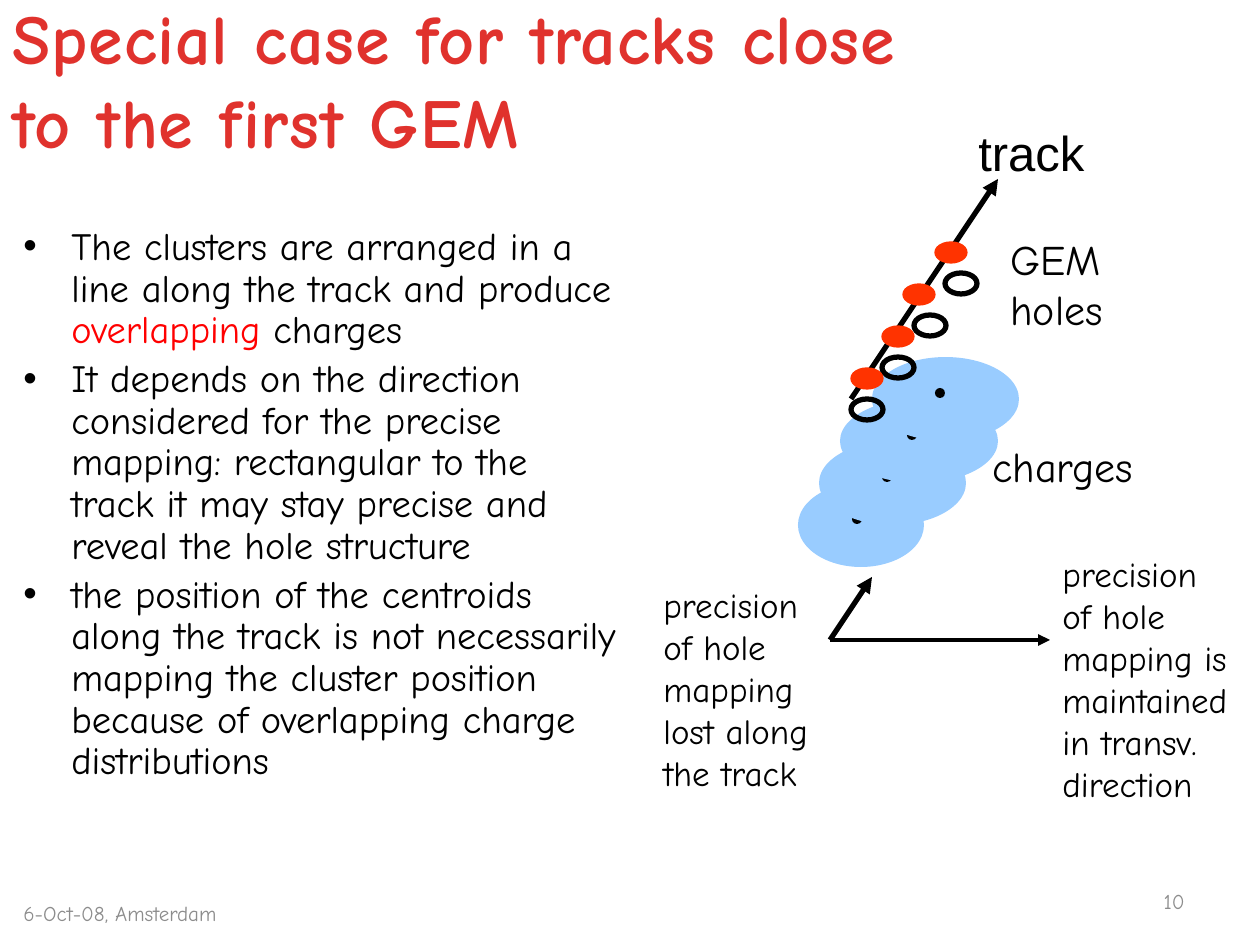
from pptx import Presentation
from pptx.dml.color import RGBColor
from pptx.enum.shapes import MSO_CONNECTOR, MSO_SHAPE
from pptx.enum.text import MSO_ANCHOR, MSO_AUTO_SIZE, PP_ALIGN
from pptx.oxml.ns import qn
from pptx.util import Pt
from lxml import etree

PX = 914400 / 126
STRAIGHT = MSO_CONNECTOR.STRAIGHT
OVAL = MSO_SHAPE.OVAL
TOP, MIDDLE = MSO_ANCHOR.TOP, MSO_ANCHOR.MIDDLE
LEFT, RIGHT = PP_ALIGN.LEFT, PP_ALIGN.RIGHT
FONT = "Comic Neue"
COLOURS = {
    "title": "E0322D",
    "text": "000000",
    "accent": "FF0000",
    "muted": "8C8C8C",
    "charge": "99CCFF",
    "cluster": "FF3300",
}


def emu(length):
    return round(length * PX)


def colour(name):
    return RGBColor.from_string(COLOURS[name])


def write(para, text, size=20, font=FONT, ink="text", bold=False, spacing=0):
    """Add text to a paragraph; a newline becomes a line break."""
    for number, line in enumerate(text.split("\n")):
        if number:
            para.add_line_break()
        span = para.add_run()
        span.text = line
        span.font.size = Pt(size)
        span.font.name = font
        span.font.bold = bold
        span.font.color.rgb = colour(ink)
        if spacing:
            span.font._element.set("spc", str(spacing))


class SlideBuilder:
    def __init__(self, page):
        self.page = page
        self.shapes = page.shapes

    def title(self, text, x, y, width, height):
        box = self.shapes.title
        box.left, box.top, box.width, box.height = map(emu, (x, y, width, height))
        frame = box.text_frame
        frame.word_wrap = True
        frame.auto_size = MSO_AUTO_SIZE.NONE
        frame.vertical_anchor = MIDDLE
        para = frame.paragraphs[0]
        para.alignment = LEFT
        write(para, text, size=40, ink="title", bold=True, spacing=50)

    def frame(self, x, y, width, height, anchor=TOP):
        box = self.shapes.add_textbox(*map(emu, (x, y, width, height)))
        box.text_frame.word_wrap = True
        box.text_frame.vertical_anchor = anchor
        return box.text_frame

    def label(self, text, x, y, width, height, anchor=TOP, align=LEFT, **style):
        para = self.frame(x, y, width, height, anchor).paragraphs[0]
        para.alignment = align
        write(para, text, **style)

    def bullets(self, items, x, y, width, height, size):
        frame = self.frame(x, y, width, height)
        for number, spans in enumerate(items):
            para = frame.add_paragraph() if number else frame.paragraphs[0]
            properties = para._p.get_or_add_pPr()
            properties.set("marL", str(emu(48)))
            properties.set("indent", str(-emu(48)))
            etree.SubElement(properties, qn("a:buFont"), typeface="Arial")
            etree.SubElement(properties, qn("a:buChar"), char="•")
            para.line_spacing = 0.9
            if number:
                para.space_before = Pt(size * 0.2)
            for text, ink in spans:
                write(para, text, size=size, ink=ink)

    def ellipse(self, x, y, width, height, fill=None, line=None, weight=1):
        shape = self.shapes.add_shape(OVAL, *map(emu, (x, y, width, height)))
        shape.shadow.inherit = False
        if fill:
            shape.fill.solid()
            shape.fill.fore_color.rgb = colour(fill)
        else:
            shape.fill.background()
        if line:
            shape.line.color.rgb = colour(line)
            shape.line.width = Pt(weight)
        else:
            shape.line.fill.background()

    def arrow(self, start, end, weight):
        line = self.shapes.add_connector(STRAIGHT, *map(emu, start + end))
        line.line.color.rgb = colour("text")
        line.line.width = Pt(weight)
        etree.SubElement(line.line._get_or_add_ln(), qn("a:tailEnd"), type="triangle")
        etree.SubElement(line._element.spPr, qn("a:effectLst"))


def main():
    deck = Presentation()
    deck.slide_width, deck.slide_height = emu(1260), emu(945)
    slide = SlideBuilder(deck.slides.add_slide(deck.slide_layouts[5]))

    # Title and bullets
    slide.title("Special case for tracks close to the first GEM", 0, 0, 966, 158)
    slide.bullets([
        [("The clusters are arranged in a line along the track and produce ", "text"),
         ("overlapping ", "accent"),
         ("charges", "text")],
        [("It depends on the direction considered for the precise mapping: "
          "rectangular to the track it may stay precise and reveal the hole "
          "structure", "text")],
        [("the position of the centroids along the track is not necessarily "
          "mapping the cluster position because of overlapping charge "
          "distributions", "text")],
    ], 11, 221, 620, 672, size=22)

    # Track
    slide.arrow((851, 399), (998, 179), 3)

    # Charge clouds from bottom to top, each covering part of the dot below
    step = 42
    clouds = [(798, 126, 852), (819, 147, 882), (840, 158, 907), (872, 147, 935)]
    for row, (cloud_x, cloud_width, dot_x) in enumerate(clouds):
        slide.ellipse(cloud_x, 483 - row * step, cloud_width, 84, fill="charge")
        slide.ellipse(dot_x, 514 - row * step, 10, 10, fill="text")

    # GEM holes and the clusters on the track, from bottom to top
    for row, hole_x in enumerate((851, 882, 914, 945)):
        slide.ellipse(hole_x, 399 - row * step, 32, 21, line="text", weight=3)
    for row, cluster_x in enumerate((851, 882, 903, 935)):
        slide.ellipse(cluster_x, 368 - row * step, 32, 21,
                      fill="cluster", line="cluster", weight=0.75)

    # Diagram labels
    slide.label("track", 966, 116, 158, 72, size=28, font="Arial")
    slide.label("charges", 980, 434, 197, 72, size=24)
    slide.label("GEM holes", 998, 227, 147, 115, size=24)

    # Precision directions
    origin = (830, 640)
    slide.arrow(origin, (1050, 640), 2.25)
    slide.arrow(origin, (872, 577), 3)
    slide.label("precision\nof hole mapping lost along the track",
                651, 577, 210, 224)
    slide.label("precision\nof hole mapping is maintained in transv. direction",
                1050, 546, 210, 267)

    # Footer
    slide.label("6-Oct-08, Amsterdam", 11, 897, 451, 32,
                anchor=MIDDLE, size=12, ink="muted")
    slide.label("10", 903, 876, 294, 50,
                anchor=MIDDLE, align=RIGHT, size=12, ink="muted")

    deck.save("out.pptx")


if __name__ == "__main__":
    main()
